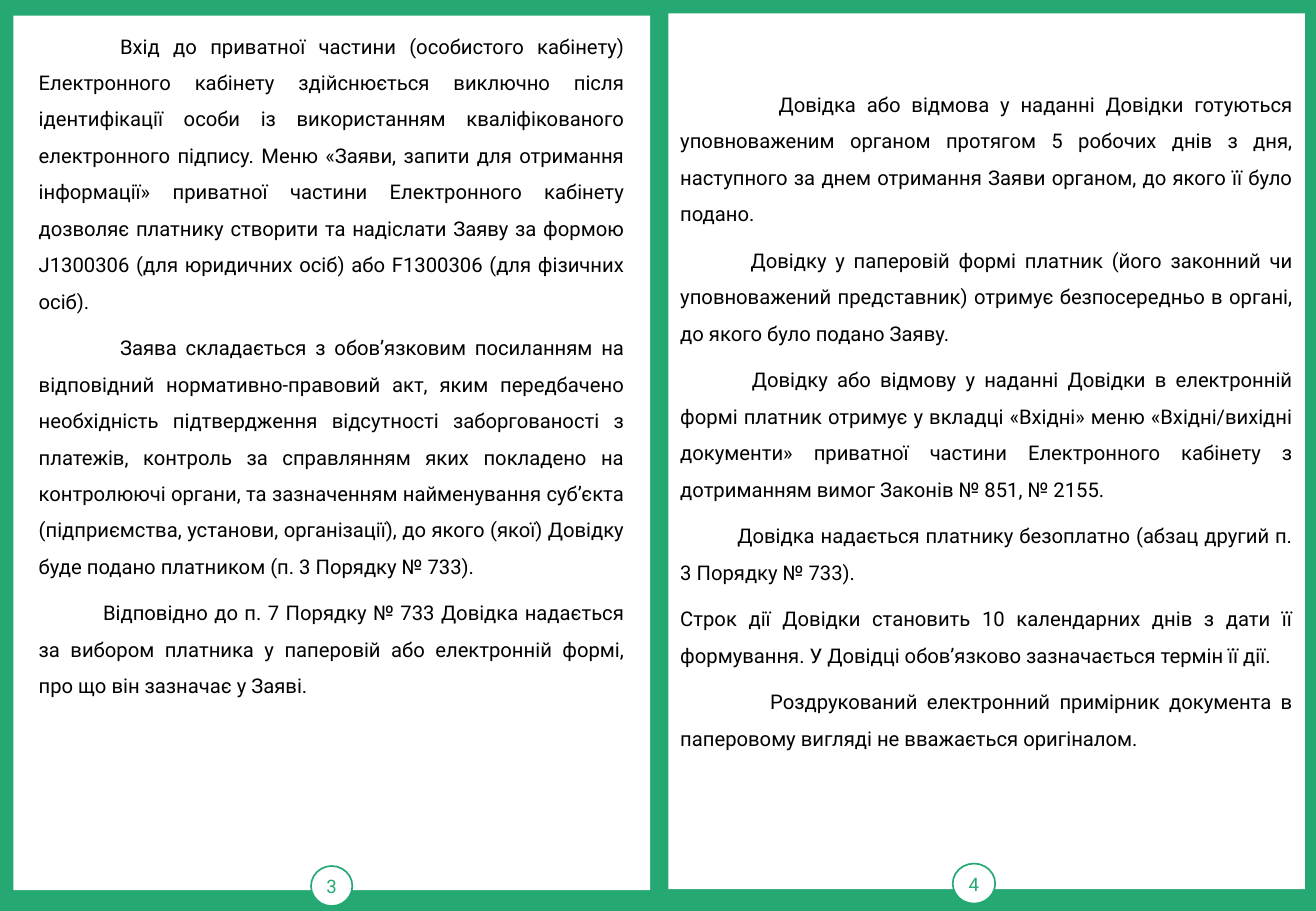
"""Build a two-page spread about getting a tax certificate."""
from pptx import Presentation
from pptx import util as u
from pptx.dml.color import RGBColor
from pptx.enum import shapes, text

COLS, ROWS = 1083, 750
CELL = u.Inches(0.01)
THEME = {
    "green": RGBColor.from_string("25A872"),
    "white": RGBColor.from_string("FFFFFF"),
    "black": RGBColor.from_string("000000"),
    "font": "Roboto",
    "body": u.Pt(12),
    "num": u.Pt(11),
    "line": u.Pt(1),
}
BODY = {"alignment": text.PP_ALIGN.JUSTIFY, "line_spacing": 1.5, "space_after": u.Pt(6)}
MID = {"alignment": text.PP_ALIGN.CENTER}
FLUSH = {"margin_left": 0, "margin_right": 0, "margin_top": 0, "margin_bottom": 0,
         "word_wrap": False, "vertical_anchor": text.MSO_ANCHOR.MIDDLE}
WRAP = {"word_wrap": True, "vertical_anchor": text.MSO_ANCHOR.TOP}

PAGES = [
    {
        "num": "3", "sheet": (11, 13, 524, 720), "badge": (256, 713, 34, 33),
        "box": (22, 13, 502, 570),
        "paras": [
            (67, "Вхід до приватної частини (особистого кабінету) Електронного кабінету здійснюється виключно після ідентифікації особи із використанням кваліфікованого електронного підпису. Меню «Заяви, запити для отримання інформації» приватної частини Електронного кабінету дозволяє платнику створити та надіслати Заяву за формою J1300306 (для юридичних осіб) або F1300306 (для фізичних осіб)."),
            (67, "Заява складається з обов’язковим посиланням на відповідний нормативно-правовий акт, яким передбачено необхідність підтвердження відсутності заборгованості з платежів, контроль за справлянням яких покладено на контролюючі органи, та зазначенням найменування суб’єкта (підприємства, установи, організації), до якого (якої) Довідку буде подано платником (п. 3 Порядку № 733)."),
            (53, "Відповідно до п. 7 Порядку № 733 Довідка надається за вибором платника у паперовій або електронній формі, про що він зазначає у Заяві."),
        ],
    },
    {
        "num": "4", "sheet": (550, 11, 524, 721), "badge": (784, 711, 35, 33),
        "box": (550, 61, 524, 570),
        "paras": [
            (81, "Довідка або відмова у наданні Довідки готуються уповноваженим органом протягом 5 робочих днів з дня, наступного за днем отримання Заяви органом, до якого її було подано."),
            (58, "Довідку у паперовій формі платник (його законний чи уповноважений представник) отримує безпосередньо в органі, до якого було подано Заяву."),
            (59, "Довідку або відмову у наданні Довідки в електронній формі платник отримує у вкладці «Вхідні» меню «Вхідні/вихідні документи» приватної частини Електронного кабінету з дотриманням вимог Законів № 851, № 2155."),
            (47, "Довідка надається платнику безоплатно (абзац другий п. 3 Порядку № 733)."),
            (0, "Строк дії Довідки становить 10 календарних днів з дати її формування. У Довідці обов’язково зазначається термін її дії."),
            (74, "Роздрукований електронний примірник документа в паперовому вигляді не вважається оригіналом."),
        ],
    },
]


def draw(kind, place):
    shape = slide.shapes.add_shape(kind, *(n * CELL for n in place))
    shape.shadow.inherit = False
    shape.fill.solid()
    shape.fill.fore_color.rgb = THEME["white"]
    shape.line.fill.background()
    return shape


def write(frame, paras, look, style, size, color):
    for key, val in look.items():
        setattr(frame, key, val)
    for i, (indent, words) in enumerate(paras):
        para = frame.add_paragraph() if i else frame.paragraphs[0]
        if indent:
            para._p.get_or_add_pPr().set("indent", str(indent * CELL))
        for key, val in style.items():
            setattr(para, key, val)
        run = para.add_run()
        run.text = words
        for key, val in {"name": THEME["font"], "size": size}.items():
            setattr(run.font, key, val)
        run.font.color.rgb = color


deck = Presentation()
deck.slide_width, deck.slide_height = COLS * CELL, ROWS * CELL
slide = deck.slides.add_slide(deck.slide_layouts[6])
slide.background.fill.solid()
slide.background.fill.fore_color.rgb = THEME["green"]

for page in PAGES:
    draw(shapes.MSO_SHAPE.RECTANGLE, page["sheet"])
    badge = draw(shapes.MSO_SHAPE.OVAL, page["badge"])
    badge.line.color.rgb = THEME["green"]
    badge.line.width = THEME["line"]
    write(badge.text_frame, [(0, page["num"])], FLUSH, MID, THEME["num"], THEME["green"])
    box = slide.shapes.add_textbox(*(n * CELL for n in page["box"]))
    write(box.text_frame, page["paras"], WRAP, BODY, THEME["body"], THEME["black"])

deck.save("out.pptx")
